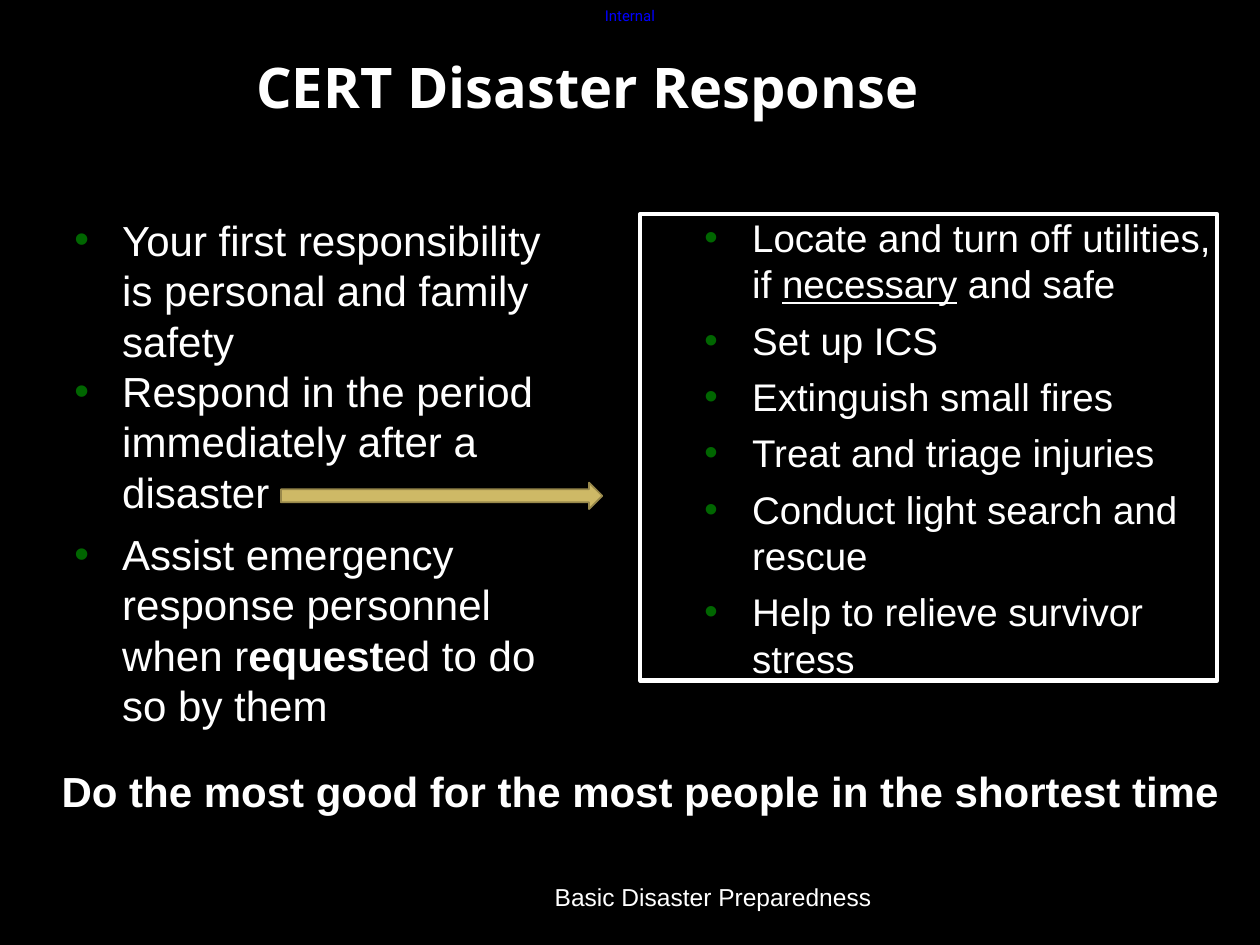
from lxml import etree
from pptx import Presentation
from pptx import util as u
from pptx.dml import color as dml
from pptx.enum import shapes, text
from pptx.oxml import ns

COLORS = {
    "background": "000000",
    "text": "FFFFFF",
    "bullet": "006600",
    "label": "0000FF",
    "arrow": "CEB966",
    "arrow_line": "98884B",
}
MARGINS = ("margin_left", "margin_top", "margin_right", "margin_bottom")

# Each paragraph is a list of (words, font changes)
DUTIES = [
    [("Your first responsibility is personal and family safety", {})],
    [("Respond in the period immediately after a disaster", {})],
    [("Assist emergency response personnel when r", {}),
     ("equest", {"bold": True}),
     ("ed to do so by them", {})],
]
ACTIONS = [
    [("Locate and turn off utilities, if ", {}),
     ("necessary", {"underline": True}),
     (" and safe", {})],
    [("Set up ICS", {})],
    [("Extinguish small fires", {})],
    [("Treat and triage injuries", {})],
    [("Conduct light search and rescue", {})],
    [("Help to relieve survivor stress", {})],
]


def rgb(name):
    return dml.RGBColor.from_string(COLORS[name])


def apply(target, values):
    for name, value in values.items():
        setattr(target, name, value)


def place(shape, left, top, width, height):
    apply(shape, {"left": u.Inches(left), "top": u.Inches(top),
                  "width": u.Inches(width), "height": u.Inches(height)})


def format_frame(shape, inset=0, wrap=True, anchor=text.MSO_ANCHOR.TOP):
    frame = shape.text_frame
    apply(frame, {"auto_size": text.MSO_AUTO_SIZE.NONE, "word_wrap": wrap,
                  "vertical_anchor": anchor})
    across, down = (u.Inches(inset), u.Inches(inset / 2))
    apply(frame, dict(zip(MARGINS, (across, down, across, down))))
    return frame


def format_font(font, size, name="Arial", color="text", **values):
    apply(font, {"size": u.Pt(size), "name": name, **values})
    font.color.rgb = rgb(color)


def set_indent(paragraph, left, first):
    properties = paragraph._p.get_or_add_pPr()
    properties.set("marL", str(u.Inches(left)))
    properties.set("indent", str(u.Inches(first)))
    return properties


def add_bullet(paragraph, left):
    properties = set_indent(paragraph, left, -0.38)
    bullet_color = etree.SubElement(properties, ns.qn("a:buClr"))
    etree.SubElement(bullet_color, ns.qn("a:srgbClr"), val=COLORS["bullet"])
    etree.SubElement(properties, ns.qn("a:buChar"), char="•")


def fill_list(shape, items, size, left, gaps):
    frame = format_frame(shape)
    for index, (item, gap) in enumerate(zip(items, gaps)):
        paragraph = frame.add_paragraph() if index else frame.paragraphs[0]
        add_bullet(paragraph, left)
        apply(paragraph, {"space_before": u.Pt(gap), "line_spacing": 1.0})
        for words, changes in item:
            run = paragraph.add_run()
            run.text = words
            format_font(run.font, size, **changes)


def add_label(slide, words, box, size, inset=0, wrap=True, align=None, **font):
    shape = slide.shapes.add_textbox(*map(u.Inches, box))
    paragraph = format_frame(shape, inset, wrap).paragraphs[0]
    paragraph.text = words
    paragraph.alignment = align
    format_font(paragraph.runs[0].font, size, **font)
    return paragraph


def add_arrow(slide, *box):
    arrow = slide.shapes.add_shape(
        shapes.MSO_SHAPE.RIGHT_ARROW, *map(u.Inches, box))
    arrow.shadow.inherit = False
    arrow.fill.solid()
    arrow.fill.fore_color.rgb = rgb("arrow")
    arrow.line.color.rgb = rgb("arrow_line")
    arrow.line.width = u.Pt(1)


def main():
    presentation = Presentation()
    apply(presentation, {"slide_width": u.Inches(10),
                         "slide_height": u.Inches(7.5)})
    slide = presentation.slides.add_slide(presentation.slide_layouts[3])
    slide.background.fill.solid()
    slide.background.fill.fore_color.rgb = rgb("background")
    title, duties, actions = list(slide.placeholders)[:3]
    center = text.PP_ALIGN.CENTER

    # Classification label and title
    add_label(slide, "Internal", (0, 0, 10, 0.24), 8.5, inset=0.1,
              align=center, name="Roboto", color="label")
    place(title, 0.16, 0.06, 9.01, 1.25)
    frame = format_frame(title, anchor=text.MSO_ANCHOR.MIDDLE)
    frame.text = "CERT Disaster Response"
    frame.paragraphs[0].alignment = center
    format_font(frame.paragraphs[0].runs[0].font, 32, "Open Sans", bold=True)

    # Duties on the left, framed actions on the right
    place(duties, 0.58, 1.7, 4.01, 4.09)
    fill_list(duties, DUTIES, 24, 0.39, (0, 0, 6.8))
    place(actions, 5.08, 1.7, 4.58, 3.7)
    fill_list(actions, ACTIONS, 22, 0.89, [0] + [5.8] * 5)
    actions.line.color.rgb = rgb("text")
    actions.line.width = u.Pt(2.5)

    # Motto, footer and arrow
    add_label(slide, "Do the most good for the most people in the shortest time",
              (0.39, 6.03, 9.39, 0.5), 24, inset=0.1, wrap=False, bold=True)
    footer = add_label(slide, "Basic Disaster Preparedness",
                       (3.75, 7, 3.41, 0.23), 14, align=center)
    set_indent(footer, 0.01, 0.4)
    add_arrow(slide, 2.23, 3.83, 2.55, 0.21)

    presentation.save("out.pptx")


if __name__ == "__main__":
    main()
